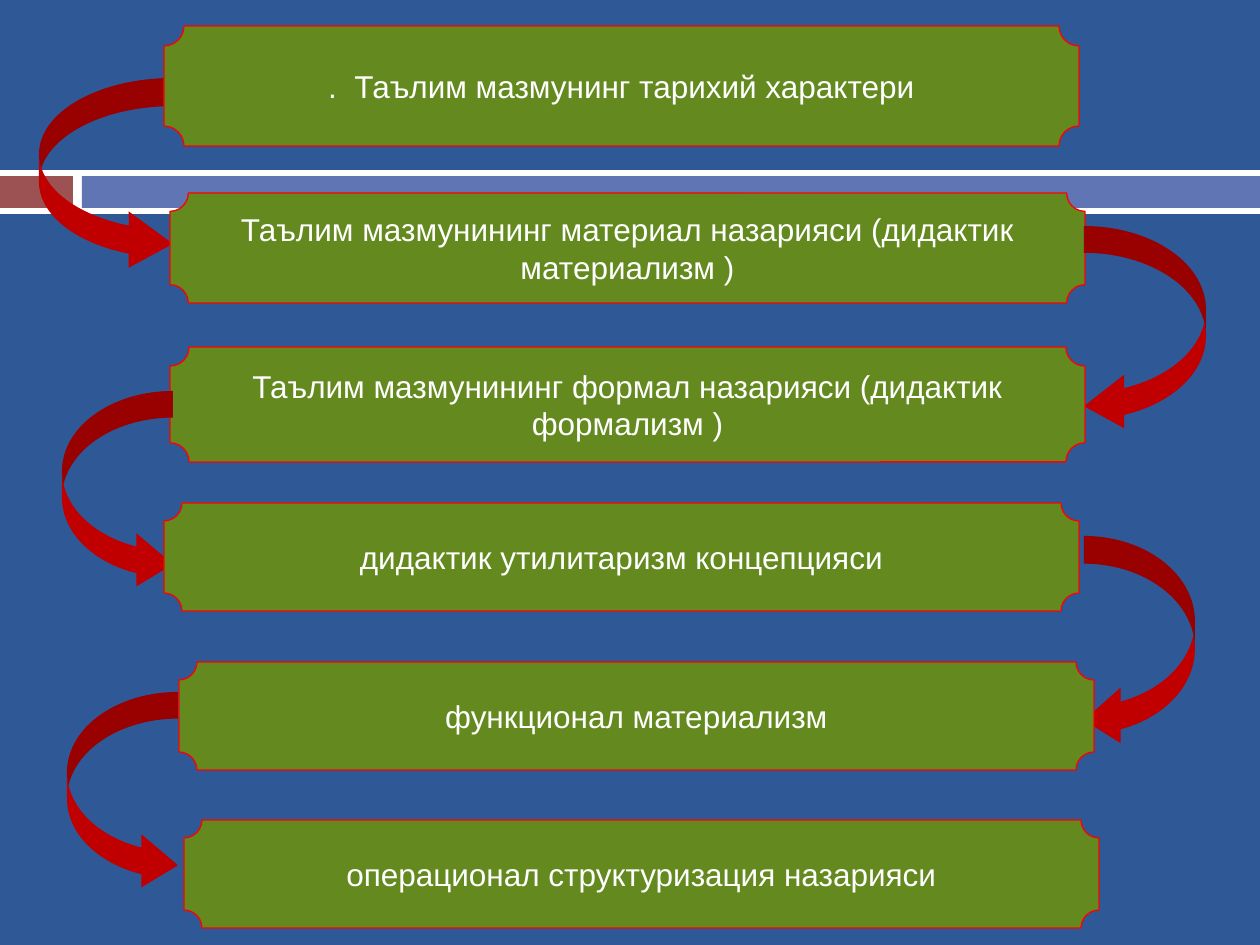
from pptx import Presentation
from pptx.dml.color import RGBColor
from pptx.enum.shapes import MSO_SHAPE
from pptx.enum.text import MSO_ANCHOR, PP_ALIGN
from pptx.util import Emu, Pt

RECTANGLE = MSO_SHAPE.RECTANGLE
PLAQUE = MSO_SHAPE.PLAQUE
RIGHT_ARROW = MSO_SHAPE.CURVED_RIGHT_ARROW
LEFT_ARROW = MSO_SHAPE.CURVED_LEFT_ARROW
MIDDLE = MSO_ANCHOR.MIDDLE
CENTER = PP_ALIGN.CENTER

NAVY = RGBColor(0x2F, 0x58, 0x97)
WHITE = RGBColor(0xFF, 0xFF, 0xFF)
BRICK = RGBColor(0x9C, 0x52, 0x52)
PERIWINKLE = RGBColor(0x60, 0x76, 0xB4)
GREEN = RGBColor(0x63, 0x89, 0x1F)
RED = RGBColor(0xFF, 0x00, 0x00)
DARK_RED = RGBColor(0xC0, 0x00, 0x00)

EMU_PER_PX = 914400 / 126
SLIDE_WIDTH, SLIDE_HEIGHT = 1260, 945
THEORY_WIDTH = 915

# left, top, width, height, colour
BANDS = [
    (0, 170, SLIDE_WIDTH, 44, WHITE),
    (0, 176, 73, 32, BRICK),
    (82, 176, SLIDE_WIDTH - 82, 32, PERIWINKLE),
]

# left, top, height, wording
THEORIES = [
    (164, 26, 120, ".  Таълим мазмунинг тарихий характери"),
    (170, 193, 110, "Таълим мазмунининг материал назарияси (дидактик материализм )"),
    (170, 347, 115, "Таълим мазмунининг формал назарияси (дидактик формализм )"),
    (164, 503, 108, "дидактик утилитаризм концепцияси"),
    (179, 662, 108, "функционал материализм"),
    (184, 820, 108, "операционал структуризация назарияси"),
]

# One arrow into each theory after the first:
# kind, left, top, width, height, shaft thickness
ARROWS = [
    (RIGHT_ARROW, 39, 78, 134, 194, 0.21),
    (LEFT_ARROW, 1084, 226, 122, 207, 0.22),
    (RIGHT_ARROW, 62, 391, 111, 200, 0.24),
    (LEFT_ARROW, 1084, 536, 111, 212, 0.25),
    (RIGHT_ARROW, 67, 692, 111, 200, 0.24),
]


def px(length):
    return Emu(round(length * EMU_PER_PX))


def add_filled(slide, kind, left, top, width, height, color):
    """Add a preset shape with a plain fill, no outline and no shadow."""
    shape = slide.shapes.add_shape(kind, px(left), px(top), px(width), px(height))
    shape.shadow.inherit = False
    shape.fill.solid()
    shape.fill.fore_color.rgb = color
    shape.line.fill.background()
    return shape


def add_theory(slide, left, top, height, wording):
    plaque = add_filled(slide, PLAQUE, left, top, THEORY_WIDTH, height, GREEN)
    plaque.line.color.rgb = RED
    plaque.line.width = Pt(0.75)
    frame = plaque.text_frame
    frame.text = wording
    frame.word_wrap = True
    frame.vertical_anchor = MIDDLE
    frame.margin_left = frame.margin_right = px(10)
    frame.margin_top = frame.margin_bottom = px(5)
    paragraph = frame.paragraphs[0]
    paragraph.alignment = CENTER
    font = paragraph.runs[0].font
    font.name = "Arial"
    font.size = Pt(18)
    font.color.rgb = WHITE


def add_arrow(slide, kind, left, top, width, height, thickness):
    """Add a curved arrow whose head is twice as wide as its shaft."""
    arrow = add_filled(slide, kind, left, top, width, height, DARK_RED)
    arrow.adjustments[0] = thickness
    arrow.adjustments[1] = 2 * thickness
    arrow.adjustments[2] = 0.33


def main():
    deck = Presentation()
    deck.slide_width, deck.slide_height = px(SLIDE_WIDTH), px(SLIDE_HEIGHT)
    slide = deck.slides.add_slide(deck.slide_layouts[6])
    slide.background.fill.solid()
    slide.background.fill.fore_color.rgb = NAVY

    for band in BANDS:
        add_filled(slide, RECTANGLE, *band)
    for arrow, theory in zip(ARROWS, THEORIES[1:]):
        add_arrow(slide, *arrow)
        add_theory(slide, *theory)
    # The first theory covers the start of its arrow, so it comes last.
    add_theory(slide, *THEORIES[0])

    deck.save("out.pptx")


if __name__ == "__main__":
    main()
